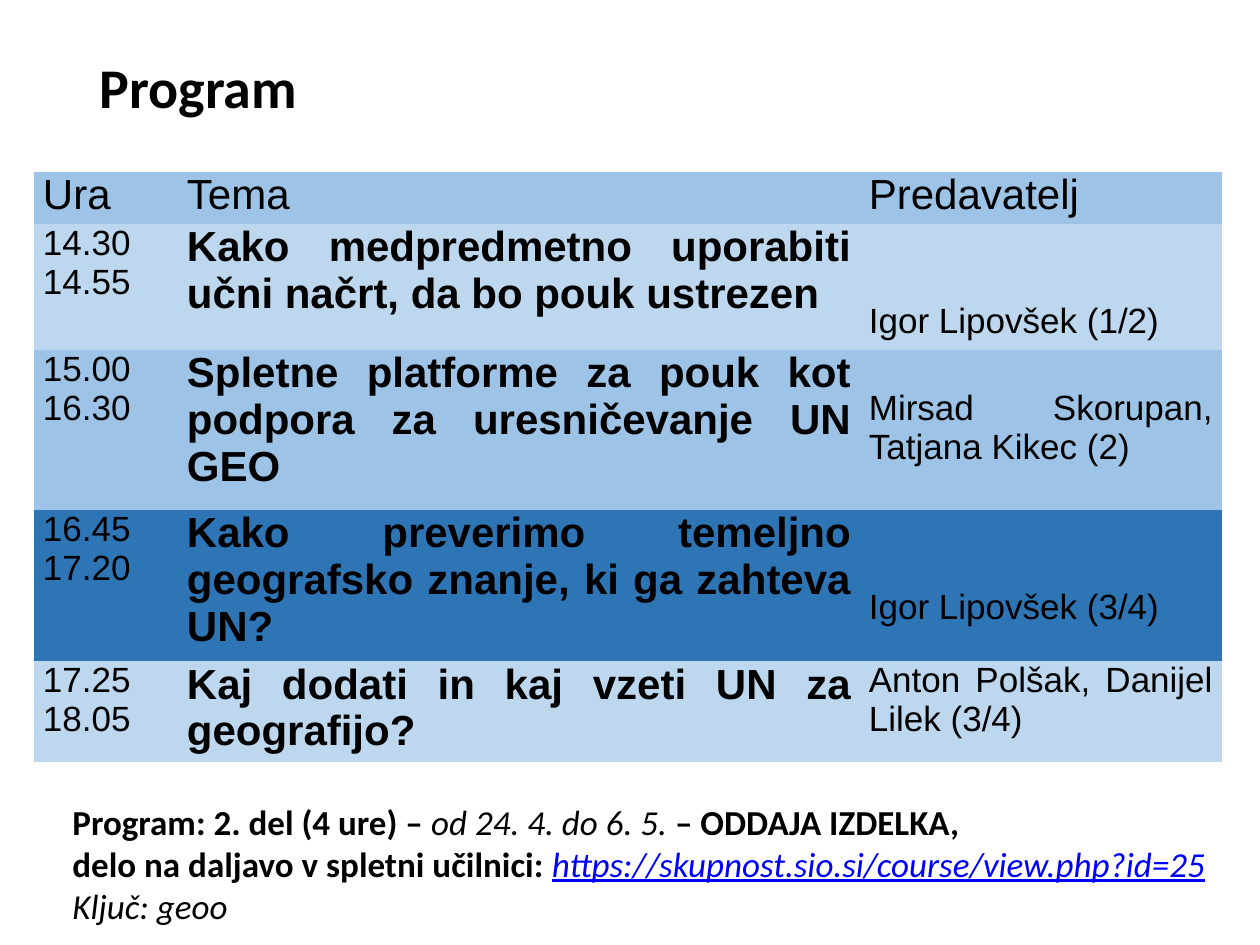
from pptx import Presentation
from pptx import util as u
from pptx.dml.color import RGBColor
from pptx.enum import text
from pptx.oxml.ns import qn

PX = 914400 // 126
COLORS = {"ink": "000000", "link": "0000FF", "mid": "9DC3E6",
          "light": "BDD7EE", "deep": "2E75B6"}
NO_GRID = "{2D5ABB26-0587-4C30-8999-92F81FD0307C}"
LINE = 39  # height of one 20 pt line in a cell

COLS = [144, 682, 362]
# height, fill, time, topic, speaker, lines above the speaker
ROWS = [
    (126, "light", "14.30 14.55",
     "Kako medpredmetno uporabiti učni načrt, da bo pouk ustrezen",
     "Igor Lipovšek (1/2)", 2),
    (160, "mid", "15.00 16.30",
     "Spletne platforme za pouk kot podpora za uresničevanje UN GEO",
     "Mirsad Skorupan, Tatjana Kikec (2)", 1),
    (151, "deep", "16.45 17.20",
     "Kako preverimo temeljno geografsko znanje, ki ga zahteva UN?",
     "Igor Lipovšek (3/4)", 2),
    (101, "light", "17.25 18.05",
     "Kaj dodati in kaj vzeti UN za geografijo?",
     "Anton Polšak, Danijel Lilek (3/4)", 0),
]

BOLD, ITALIC = {"bold": True}, {"italic": True}
NOTES = [
    [("Program: 2. del (4 ure) – ", BOLD), ("od 24. 4. do 6. 5.", ITALIC),
     (" – ODDAJA IZDELKA,", BOLD)],
    [("delo na daljavo v spletni učilnici: ", BOLD),
     ("https://skupnost.sio.si/course/view.php?id=25",
      {"italic": True, "under": True, "color": "link"})],
    [("Ključ: geoo", ITALIC)],
]


def px(n):
    return u.Emu(n * PX)


def rgb(name):
    return RGBColor.from_string(COLORS[name])


def add_run(para, words, size, face, bold=False, italic=False,
            under=False, color="ink"):
    run = para.add_run()
    run.text = words
    font = run.font
    font.name, font.size = face, u.Pt(size)
    font.bold, font.italic, font.underline = bold, italic, under
    font.color.rgb = rgb(color)


def add_box(slide, left, top, width, height, lines, size):
    """Add a text box; each line is a list of (words, style) runs."""
    box = slide.shapes.add_textbox(px(left), px(top), px(width), px(height))
    frame = box.text_frame
    frame.word_wrap = True
    for i, line in enumerate(lines):
        para = frame.add_paragraph() if i else frame.paragraphs[0]
        for words, style in line:
            add_run(para, words, size, "Calibri", **style)
    return frame


def fill_cell(cell, words, size, fill, bold=False, skip=0):
    """Write one cell, its text lowered by skip lines."""
    cell.fill.solid()
    cell.fill.fore_color.rgb = rgb(fill)
    cell.margin_left = cell.margin_right = px(9)
    cell.margin_top, cell.margin_bottom = px(skip * LINE), 0
    para = cell.text_frame.paragraphs[0]
    para.alignment = text.PP_ALIGN.JUSTIFY
    add_run(para, words, size, "Arial", bold=bold)


def add_plan(slide):
    heights = [52] + [row[0] for row in ROWS]
    table = slide.shapes.add_table(
        len(heights), len(COLS), px(34), px(172),
        px(sum(COLS)), px(sum(heights))).table
    table.first_row = table.horz_banding = False
    table._tbl.tblPr.find(qn("a:tableStyleId")).text = NO_GRID
    for col, width in zip(table.columns, COLS):
        col.width = px(width)
    for row, height in zip(table.rows, heights):
        row.height = px(height)
    for i, head in enumerate(["Ura", "Tema", "Predavatelj"]):
        fill_cell(table.cell(0, i), head, 24, "mid")
    for i, (_, fill, time, topic, who, skip) in enumerate(ROWS, 1):
        fill_cell(table.cell(i, 0), time, 20, fill)
        fill_cell(table.cell(i, 1), topic, 24, fill, bold=True)
        fill_cell(table.cell(i, 2), who, 20, fill, skip=skip)


def main():
    prs = Presentation()
    prs.slide_width, prs.slide_height = u.Inches(10), u.Inches(7.5)
    slide = prs.slides.add_slide(prs.slide_layouts[6])
    title = add_box(slide, 87, 16, 978, 149, [[("Program", BOLD)]], 32)
    title.vertical_anchor = text.MSO_ANCHOR.MIDDLE
    title.paragraphs[0].line_spacing = 0.9
    add_box(slide, 60, 794, 1162, 140, NOTES, 20)
    add_plan(slide)
    prs.save("out.pptx")


if __name__ == "__main__":
    main()
